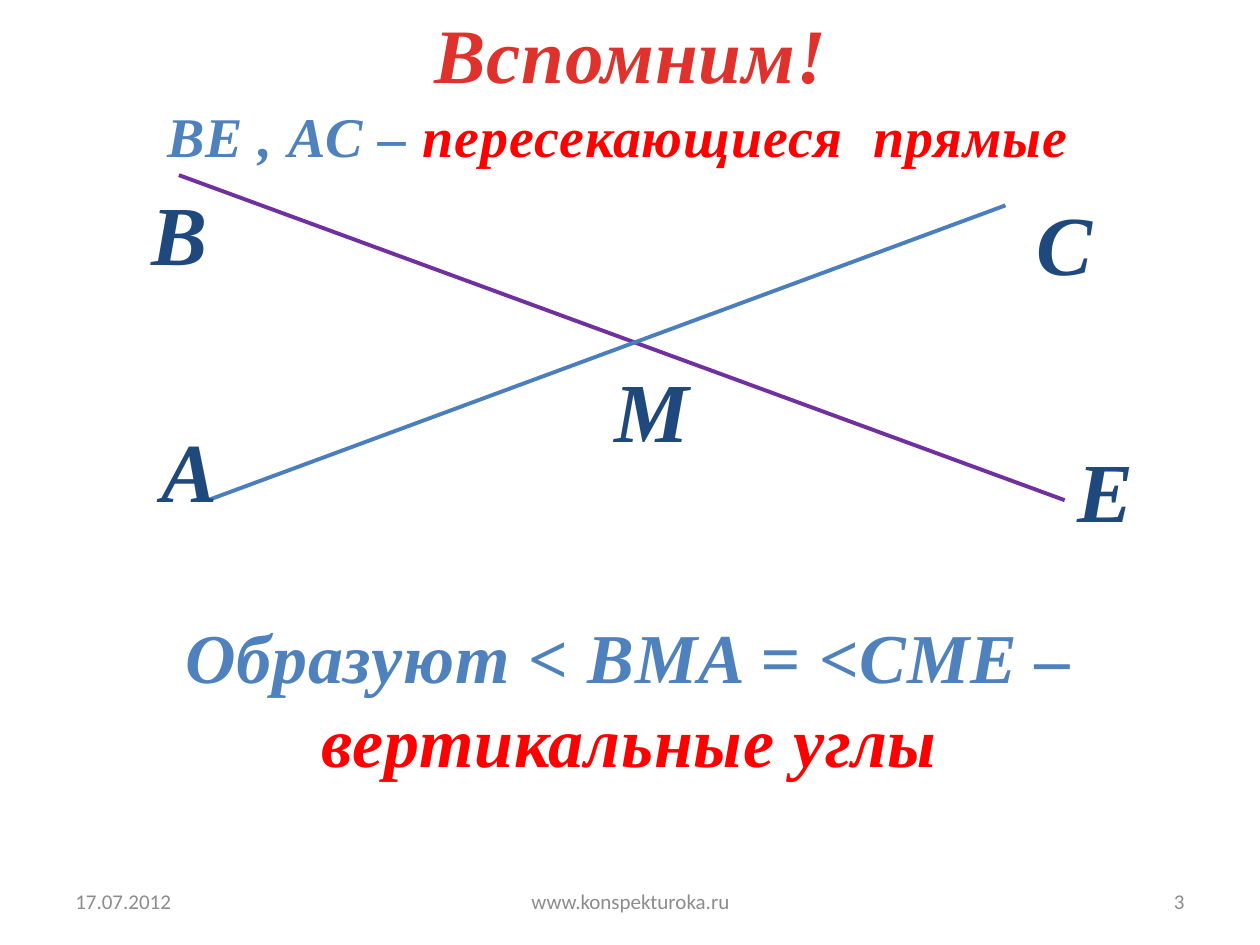
from dataclasses import dataclass

from lxml.etree import SubElement
from pptx import Presentation
from pptx.dml.color import RGBColor
from pptx.enum.shapes import MSO_CONNECTOR
from pptx.enum.text import MSO_ANCHOR, MSO_AUTO_SIZE, PP_ALIGN
from pptx.oxml.ns import qn
from pptx.slide import Slide
from pptx.util import Inches, Pt

SERIF = {"name": "Times New Roman", "bold": True, "italic": True}
FOOTER_FONT = {"name": "Calibri", "size": Pt(12)}
POINT_FONT = {**SERIF, "size": Pt(48)}

TITLE_RED, RED, BLUE, NAVY, GREY = "E0322D", "FF0000", "4F81BD", "1F497D", "8C8C8C"
LETTER_SPACING = "50"  # hundredths of a point


@dataclass
class Label:
    left: float
    top: float
    width: float
    height: float
    spans: list[tuple[str, str]]  # wording and colour
    font: dict
    align: PP_ALIGN = PP_ALIGN.CENTER
    frame: dict | None = None
    spaced: bool = False


@dataclass
class Segment:
    start: tuple[float, float]
    end: tuple[float, float]
    color: str


def rgb(color: str) -> RGBColor:
    return RGBColor.from_string(color)


def draw_label(page: Slide, label: Label) -> None:
    box = page.shapes.add_textbox(
        Inches(label.left), Inches(label.top), Inches(label.width), Inches(label.height)
    )
    for name, value in (label.frame or {}).items():
        setattr(box.text_frame, name, value)
    para = box.text_frame.paragraphs[0]
    para.alignment = label.align
    for wording, color in label.spans:
        span = para.add_run()
        span.text = wording
        for name, value in label.font.items():
            setattr(span.font, name, value)
        span.font.color.rgb = rgb(color)
        if label.spaced:
            span._r.get_or_add_rPr().set("spc", LETTER_SPACING)


def draw_segment(page: Slide, segment: Segment) -> None:
    line = page.shapes.add_connector(
        MSO_CONNECTOR.STRAIGHT, *(Inches(value) for value in segment.start + segment.end)
    )
    line.line.color.rgb = rgb(segment.color)
    line.line.width = Pt(2.25)
    SubElement(line._element.spPr, qn("a:effectLst"))


GROWING = {"word_wrap": True, "auto_size": MSO_AUTO_SIZE.SHAPE_TO_FIT_TEXT}
ONE_LINE = {**GROWING, "word_wrap": False}
FOOTER = {"word_wrap": True, "vertical_anchor": MSO_ANCHOR.MIDDLE}

FOOTERS = [
    (0.5, 2.33, "17.07.2012", PP_ALIGN.LEFT),
    (3.42, 3.17, "www.konspekturoka.ru", PP_ALIGN.CENTER),
    (7.17, 2.33, "3", PP_ALIGN.RIGHT),
]

SEGMENTS = [
    Segment((1.42, 1.39), (8.45, 3.97), "7030A0"),
    Segment((1.65, 3.97), (7.98, 1.63), "4B7EBC"),
]

POINTS = [
    ("A", 1.18, 3.27, 0.65),
    ("В", 1.1, 1.39, 0.65),
    ("М", 4.78, 2.8, 0.8),
    ("С", 8.13, 1.47, 0.65),
    ("Е", 8.45, 3.43, 0.65),
]

STATEMENTS = [
    Label(3.33, 0, 3.35, 0.84, [("Вспомним!", TITLE_RED)],
          {**SERIF, "size": Pt(44)}, frame=ONE_LINE, spaced=True),
    Label(0.9, 4.82, 8.19, 1.45,
          [("Образуют < BMA = <CME – ", BLUE), ("вертикальные углы", RED)],
          {**SERIF, "size": Pt(40)}, frame=GROWING, spaced=True),
    Label(0.75, 0.76, 8.19, 0.64,
          [(" BЕ , АС – ", BLUE), ("пересекающиеся  прямые", RED)],
          {**SERIF, "size": Pt(32)}, frame=GROWING, spaced=True),
]


def main() -> None:
    deck = Presentation()
    deck.slide_width, deck.slide_height = Inches(10), Inches(7.5)
    page = deck.slides.add_slide(deck.slide_layouts[6])

    # Date, site and page number
    for left, width, wording, align in FOOTERS:
        draw_label(page, Label(left, 6.95, width, 0.4, [(wording, GREY)],
                               FOOTER_FONT, align, FOOTER))

    # Crossing lines and their named points
    for segment in SEGMENTS:
        draw_segment(page, segment)
    for name, left, top, width in POINTS:
        draw_label(page, Label(left, top, width, 0.91, [(name, NAVY)],
                               POINT_FONT, PP_ALIGN.LEFT, ONE_LINE))

    # Title and statements
    for statement in STATEMENTS:
        draw_label(page, statement)

    deck.save("out.pptx")


if __name__ == "__main__":
    main()
